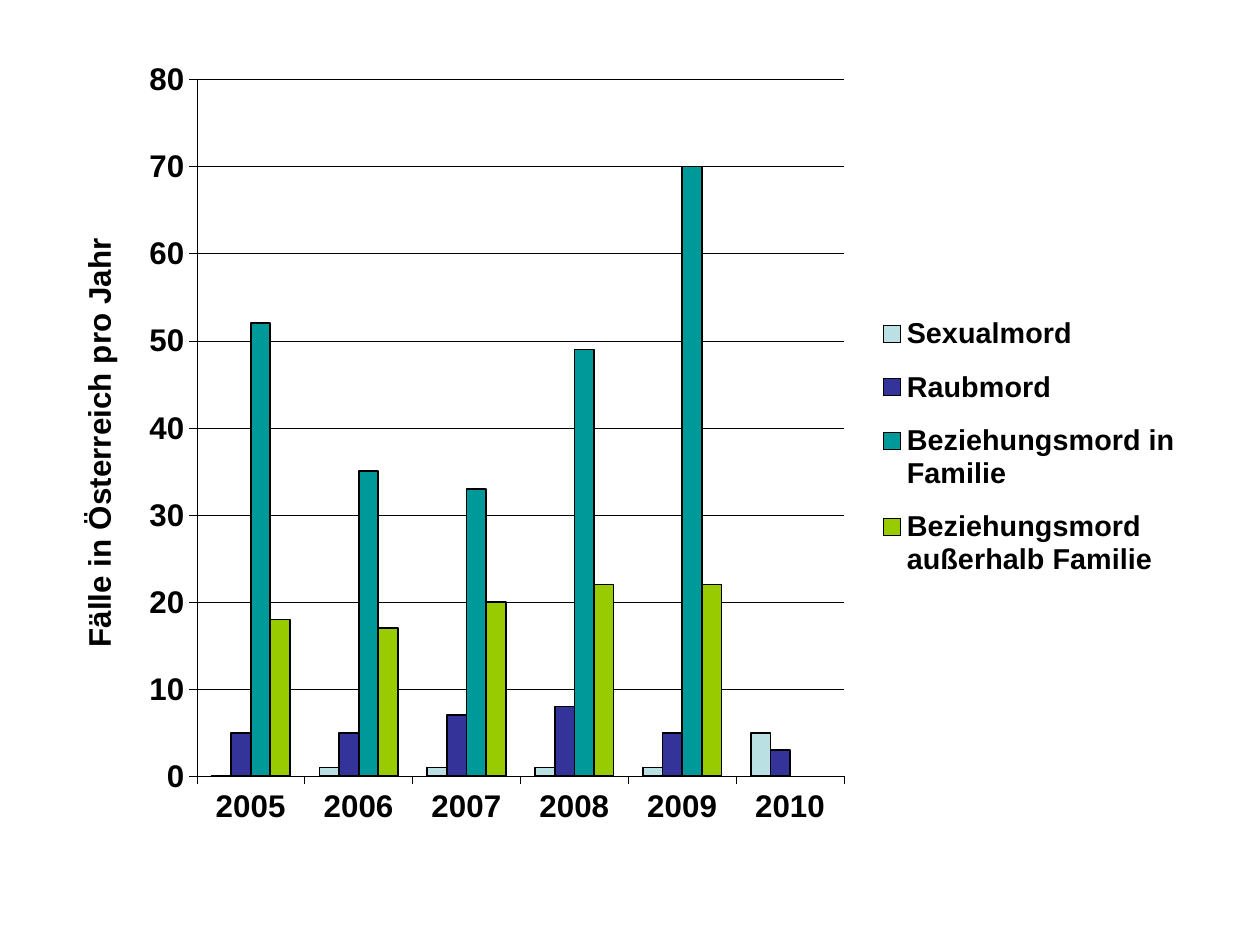
from dataclasses import dataclass

from lxml import etree
from pptx import Presentation, util as u
from pptx.chart.data import CategoryChartData
from pptx.dml.color import RGBColor
from pptx.enum import chart as ec
from pptx.oxml.ns import qn


@dataclass(frozen=True)
class Theme:
    font: str = "Arial"
    ink: str = "000000"
    series: tuple = ("BBE0E3", "333399", "009999", "99CC00")
    axis_size: float = 17.9
    legend_size: float = 16.4
    thin: float = 0.25
    outline: float = 1


YEARS = ["2005", "2006", "2007", "2008", "2009", "2010"]
CASES = {
    "Sexualmord": (0, 1, 1, 1, 1, 5),
    "Raubmord": (5, 5, 7, 8, 5, 3),
    "Beziehungsmord in Familie": (52, 35, 33, 49, 70, None),
    "Beziehungsmord außerhalb Familie": (18, 17, 20, 22, 22, None),
}


class SlideBuilder:
    def __init__(self, slide, theme):
        self.slide = slide
        self.theme = theme

    def style_font(self, font, size):
        font.name = self.theme.font
        font.size = u.Pt(size)
        font.bold = True
        font.color.rgb = RGBColor.from_string(self.theme.ink)

    def style_line(self, line, width):
        line.color.rgb = RGBColor.from_string(self.theme.ink)
        line.width = u.Pt(width)

    def set_layout(self, parent, index, box, inner=False):
        """Place a chart part by fractions of the chart area."""
        for old in parent.findall(qn("c:layout")):
            parent.remove(old)
        layout = etree.Element(qn("c:layout"))
        manual = etree.SubElement(layout, qn("c:manualLayout"))
        settings = [("layoutTarget", "inner")] if inner else []
        settings += [("xMode", "edge"), ("yMode", "edge")]
        settings += zip("xywh", box)
        for tag, value in settings:
            etree.SubElement(manual, qn(f"c:{tag}")).set("val", str(value))
        parent.insert(index, layout)

    def style_axis(self, axis):
        axis.major_tick_mark = ec.XL_TICK_MARK.OUTSIDE
        axis.minor_tick_mark = ec.XL_TICK_MARK.NONE
        self.style_font(axis.tick_labels.font, self.theme.axis_size)
        self.style_line(axis.format.line, self.theme.thin)

    def add_axis_title(self, axis, wording):
        paragraph = axis.axis_title.text_frame.paragraphs[0]
        run = paragraph.add_run()
        run.text = wording
        self.style_font(run.font, self.theme.axis_size)

    def add_legend(self, chart, box):
        chart.has_legend = True
        legend = chart.legend
        legend.position = ec.XL_LEGEND_POSITION.RIGHT
        legend.include_in_layout = False
        self.style_font(legend.font, self.theme.legend_size)
        element = chart._chartSpace.chart.find(qn("c:legend"))
        self.set_layout(element, 1, box)

    def add_column_chart(self, left, top, width, height, categories, values):
        data = CategoryChartData()
        data.categories = categories
        for name, numbers in values.items():
            data.add_series(name, numbers)
        frame = self.slide.shapes.add_chart(
            ec.XL_CHART_TYPE.COLUMN_CLUSTERED,
            u.Inches(left), u.Inches(top), u.Inches(width), u.Inches(height), data)
        chart = frame.chart
        chart.has_title = False
        self.style_font(chart.font, self.theme.axis_size)

        # Columns
        plot = chart.plots[0]
        plot.gap_width = 150
        plot.overlap = 0
        plot.vary_by_categories = False
        for series, color in zip(plot.series, self.theme.series):
            series.invert_if_negative = False
            series.format.fill.solid()
            series.format.fill.fore_color.rgb = RGBColor.from_string(color)
            self.style_line(series.format.line, self.theme.outline)
        return chart


def main():
    presentation = Presentation()
    presentation.slide_width = u.Inches(10)
    presentation.slide_height = u.Inches(7.5)
    slide = presentation.slides.add_slide(presentation.slide_layouts[6])
    builder = SlideBuilder(slide, Theme())

    # Cases per year
    chart = builder.add_column_chart(0.56, 0.36, 8.95, 6.44, YEARS, CASES)
    builder.set_layout(chart._chartSpace.chart.plotArea, 0,
                       (0.112, 0.042, 0.574, 0.859), inner=True)

    # Axes
    category_axis, value_axis = chart.category_axis, chart.value_axis
    for axis in (category_axis, value_axis):
        builder.style_axis(axis)
    category_axis.tick_label_position = ec.XL_TICK_LABEL_POSITION.LOW
    value_axis.minimum_scale = 0
    value_axis.maximum_scale = 80
    value_axis.major_unit = 10
    value_axis.has_major_gridlines = True
    builder.style_line(value_axis.major_gridlines.format.line, builder.theme.thin)
    builder.add_axis_title(value_axis, "Fälle in Österreich pro Jahr")

    # Legend
    builder.add_legend(chart, (0.71, 0.31, 0.28, 0.37))

    presentation.save("out.pptx")


if __name__ == "__main__":
    main()
